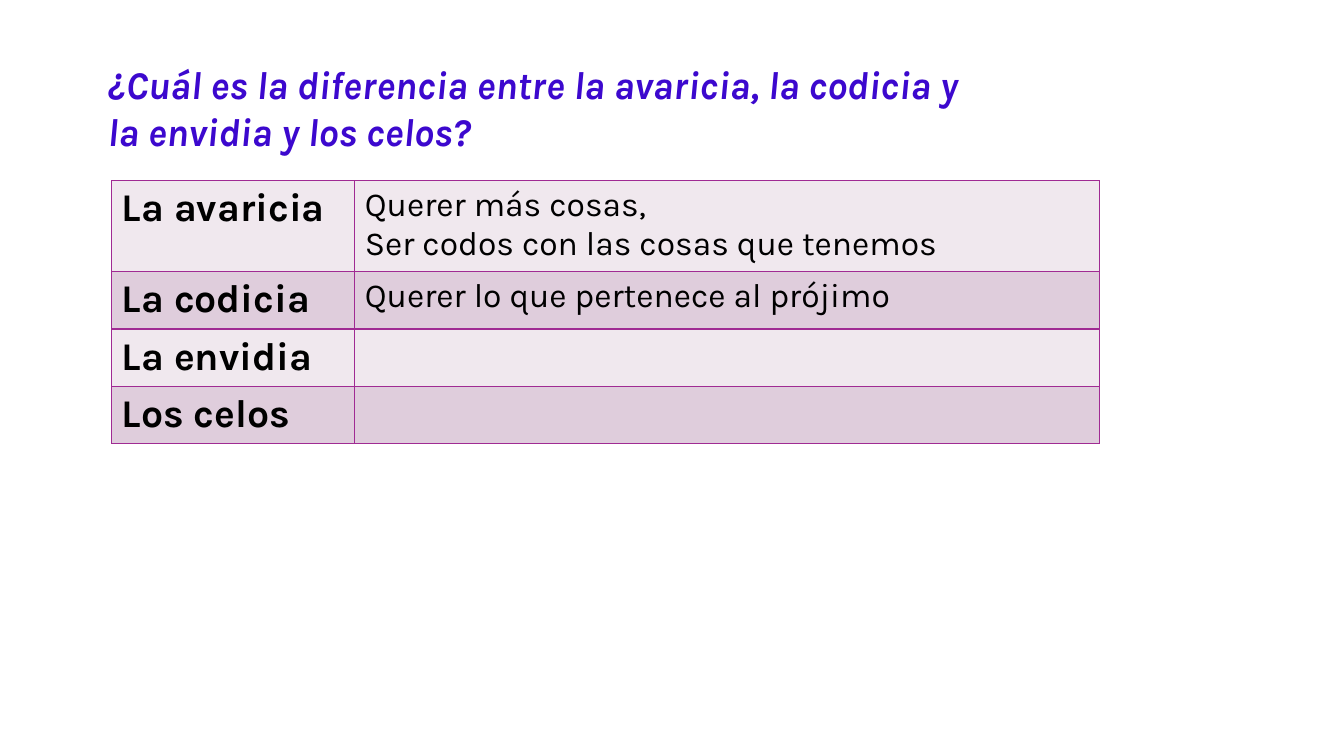
from dataclasses import dataclass

from lxml.etree import SubElement as Sub
from pptx import Presentation
from pptx.dml.color import RGBColor as Rgb
from pptx.oxml.ns import qn
from pptx.table import _Cell as Cell
from pptx.text.text import TextFrame as Frame
from pptx.util import Pt

FONT = "Karla"
BLACK = "000000"
VIOLET = "3C08CE"
EDGE = "A02B93"
BANDS = ("F0E8EE", "DFCDDC")


@dataclass
class Row:
    term: str
    notes: tuple[str, ...]
    high: float


ROWS = [
    Row("La avaricia", ("Querer más cosas,", "Ser codos con las cosas que tenemos"), 64.4),
    Row("La codicia", ("Querer lo que pertenece al prójimo",), 41),
    Row("La envidia", (), 41),
    Row("Los celos", (), 41),
]
WIDTHS = (173.5, 532.1)


def color(code: str) -> Rgb:
    return Rgb.from_string(code)


def write(frame: Frame, *lines: str, size: float, tint: str = BLACK,
          bold: bool = False, slant: bool = False) -> None:
    for i, line in enumerate(lines):
        para = frame.add_paragraph() if i else frame.paragraphs[0]
        run = para.add_run()
        run.text = line
        font = run.font
        font.name = FONT
        font.size = Pt(size)
        font.bold = bold
        font.italic = slant
        font.color.rgb = color(tint)


def paint(cell: Cell, fill: str) -> None:
    props = cell._tc.get_or_add_tcPr()
    for side in ("a:lnL", "a:lnR", "a:lnT", "a:lnB"):
        line = Sub(props, qn(side), w=str(Pt(1)))
        solid = Sub(line, qn("a:solidFill"))
        Sub(solid, qn("a:srgbClr"), val=EDGE)
    cell.fill.solid()
    cell.fill.fore_color.rgb = color(fill)


def main() -> None:
    deck = Presentation()
    deck.slide_width = Pt(960)
    deck.slide_height = Pt(540)
    slide = deck.slides.add_slide(deck.slide_layouts[6])

    title = slide.shapes.add_textbox(Pt(69.8), Pt(39.6), Pt(650.2), Pt(143.3))
    title.text_frame.word_wrap = True
    title.text_frame.margin_right = Pt(14)
    write(title.text_frame,
          "¿Cuál es la diferencia entre la avaricia, la codicia y la envidia y los celos?",
          size=28, tint=VIOLET, bold=True, slant=True)

    high = sum(row.high for row in ROWS)
    grid = slide.shapes.add_table(len(ROWS), len(WIDTHS), Pt(79.9), Pt(129.2),
                                  Pt(sum(WIDTHS)), Pt(high))
    table = grid.table
    table.first_row = False
    table.horz_banding = False
    for col, width in zip(table.columns, WIDTHS):
        col.width = Pt(width)
    for i, row in enumerate(ROWS):
        table.rows[i].height = Pt(row.high)
        term, note = table.cell(i, 0), table.cell(i, 1)
        for cell in (term, note):
            paint(cell, BANDS[i % 2])
        write(term.text_frame, row.term, size=28, bold=True)
        write(note.text_frame, *row.notes, size=24)

    deck.save("out.pptx")


if __name__ == "__main__":
    main()
